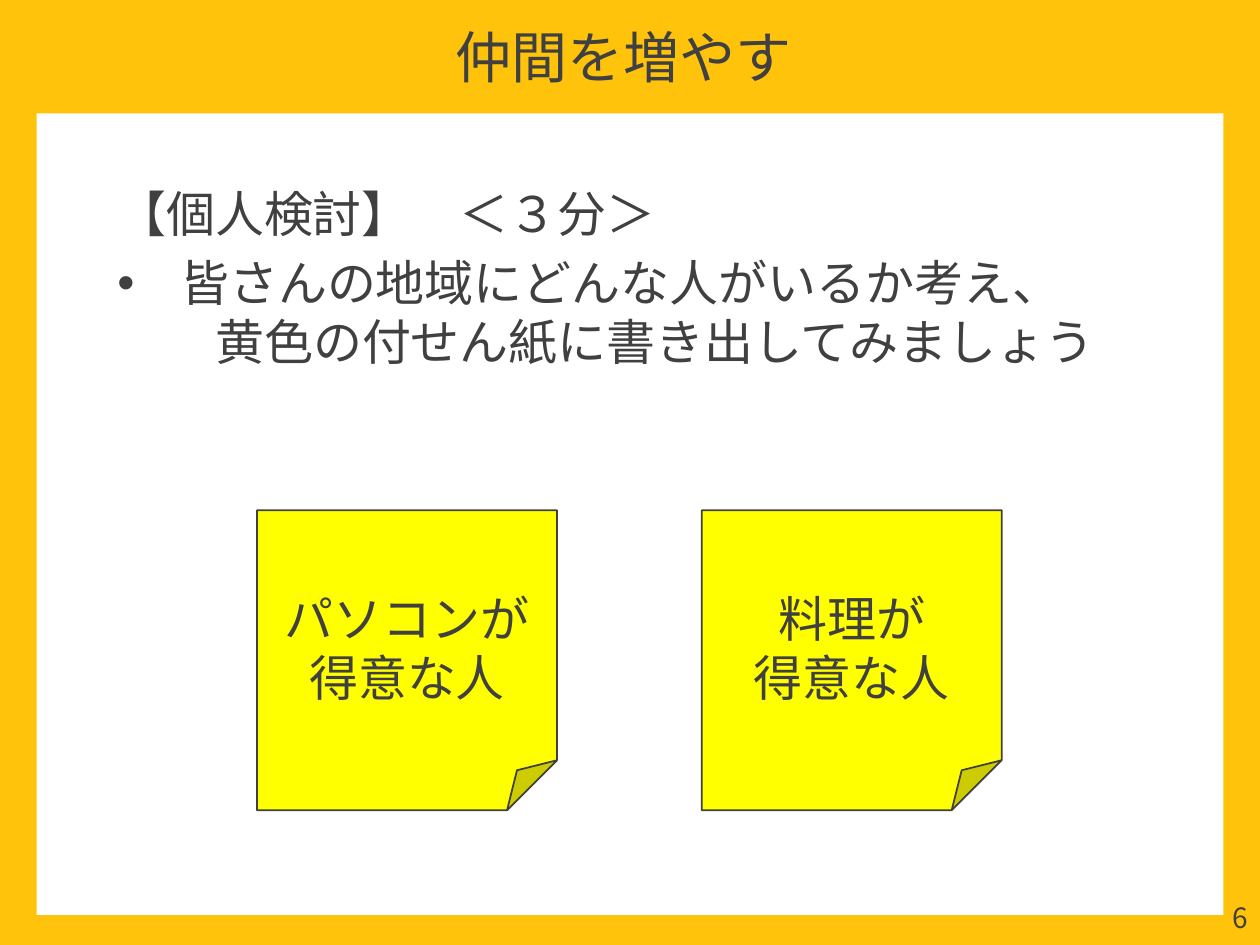
from dataclasses import dataclass

from lxml import etree
from pptx import Presentation
from pptx.dml.color import RGBColor
from pptx.enum.shapes import MSO_SHAPE
from pptx.enum.text import MSO_ANCHOR, MSO_AUTO_SIZE, PP_ALIGN
from pptx.oxml.ns import qn
from pptx.util import Pt

RECTANGLE, FOLDED_CORNER = MSO_SHAPE.RECTANGLE, MSO_SHAPE.FOLDED_CORNER
TOP, MIDDLE = MSO_ANCHOR.TOP, MSO_ANCHOR.MIDDLE
CENTER, RIGHT, JUSTIFY = PP_ALIGN.CENTER, PP_ALIGN.RIGHT, PP_ALIGN.JUSTIFY

FONT = "Noto Sans CJK JP"
INK, AMBER, WHITE, NOTE_YELLOW = "404040", "FFC30C", "FFFFFF", "FFFF00"
BODY_SIZE = 28
NOTE_SIDE = 171.4


@dataclass(frozen=True)
class Box:
    left: float
    top: float
    width: float
    height: float

    def lengths(self):
        return [Pt(v) for v in (self.left, self.top, self.width, self.height)]


@dataclass(frozen=True)
class StickyNote:
    left: float
    label: str


NOTES = [StickyNote(146.9, "パソコンが得意な人"), StickyNote(401, "料理が\v得意な人")]


def rgb(value: str) -> RGBColor:
    return RGBColor.from_string(value)


def place(shape, box: Box) -> None:
    shape.left, shape.top, shape.width, shape.height = box.lengths()


def set_frame(frame, anchor=TOP, insets=(7.2, 3.6, 7.2, 3.6)) -> None:
    """Set wrapping, anchor and insets (left, top, right, bottom)."""
    frame.word_wrap = True
    frame.auto_size = MSO_AUTO_SIZE.NONE
    frame.vertical_anchor = anchor
    (frame.margin_left, frame.margin_top,
     frame.margin_right, frame.margin_bottom) = [Pt(v) for v in insets]


def write(paragraph, text: str, *, size=BODY_SIZE, align=CENTER, after=0,
          line_spacing=1.0, left=0, hanging=0, bullet="") -> None:
    paragraph.text = text
    paragraph.alignment = align
    paragraph.space_before, paragraph.space_after = Pt(0), Pt(after)
    paragraph.line_spacing = line_spacing
    properties = paragraph._p.get_or_add_pPr()
    properties.set("marL", str(Pt(left)))
    properties.set("indent", str(-Pt(hanging)))
    if bullet:
        etree.SubElement(properties, qn("a:buFont"), typeface="Arial")
        etree.SubElement(properties, qn("a:buChar"), char=bullet)
    else:
        etree.SubElement(properties, qn("a:buNone"))
    for run in paragraph.runs:
        run.font.size = Pt(size)
        run.font.name = FONT
        run.font.color.rgb = rgb(INK)
        etree.SubElement(run.font._element, qn("a:ea"), typeface=FONT)


def add_filled(slide, kind, box: Box, fill: str, outline: str = ""):
    shape = slide.shapes.add_shape(kind, *box.lengths())
    shape.shadow.inherit = False
    shape.fill.solid()
    shape.fill.fore_color.rgb = rgb(fill)
    if outline:
        shape.line.color.rgb = rgb(outline)
        shape.line.width = Pt(1)
    else:
        shape.line.fill.background()
    return shape


def add_note(slide, note: StickyNote) -> None:
    box = Box(note.left, 291.6, NOTE_SIDE, NOTE_SIDE)
    shape = add_filled(slide, FOLDED_CORNER, box, NOTE_YELLOW, INK)
    set_frame(shape.text_frame, MIDDLE, (7.2, 17.3, 7.2, 3.6))
    write(shape.text_frame.paragraphs[0], note.label)


def main() -> None:
    deck = Presentation()
    deck.slide_width, deck.slide_height = Pt(720), Pt(540)
    slide = deck.slides.add_slide(deck.slide_layouts[1])
    title, body = slide.shapes.title, slide.placeholders[1]

    for box, fill in ((Box(0, 0, 720, 540), AMBER),
                      (Box(20.9, 64.8, 678.2, 458), WHITE)):
        backdrop = add_filled(slide, RECTANGLE, box, fill)
        title.element.addprevious(backdrop.element)

    place(title, Box(10.8, 13.7, 691.2, 51.1))
    set_frame(title.text_frame)
    write(title.text_frame.paragraphs[0], "仲間を増やす", size=32, line_spacing=0.9)

    place(body, Box(59.8, 72.7, 600, 174.2))
    instructions = body.text_frame
    set_frame(instructions, MIDDLE, (7.2, 2.9, 7.2, 5.8))
    write(instructions.paragraphs[0], "【個人検討】　＜３分＞", align=JUSTIFY, after=6)
    write(instructions.add_paragraph(), "皆さんの地域にどんな人がいるか考え、",
          align=JUSTIFY, left=36, hanging=36, bullet="•")
    write(instructions.add_paragraph(), "黄色の付せん紙に書き出してみましょう",
          align=JUSTIFY, left=2 * BODY_SIZE)

    for note in NOTES:
        add_note(slide, note)

    page_number = slide.shapes.add_textbox(*Box(558, 511.2, 162, 28.8).lengths())
    set_frame(page_number.text_frame)
    write(page_number.text_frame.paragraphs[0], "6", size=16, align=RIGHT)

    deck.save("out.pptx")


if __name__ == "__main__":
    main()
